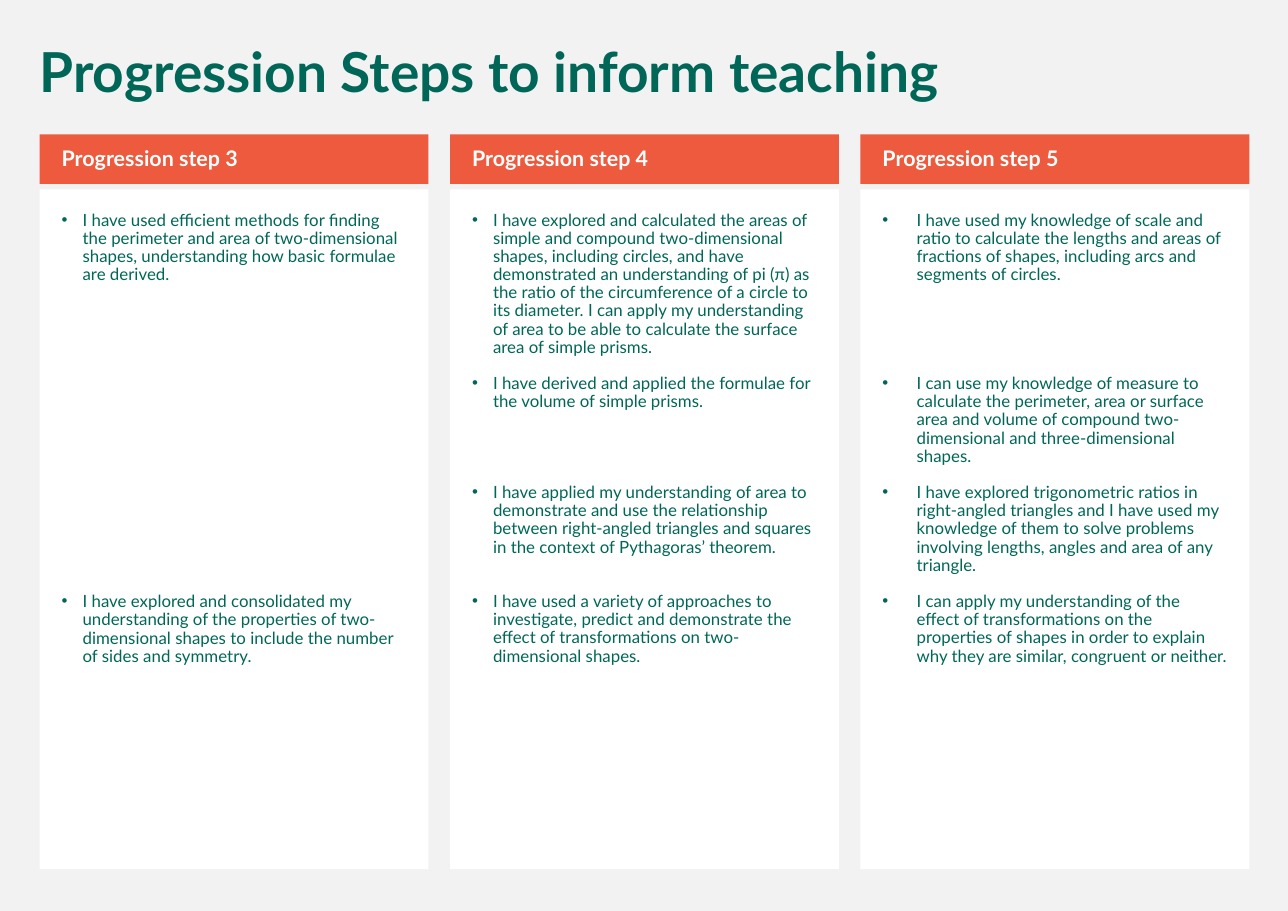
"""Build the slide of progression steps 3 to 5 as three headed columns."""
from lxml.etree import SubElement
from pptx import Presentation
from pptx.dml.color import RGBColor
from pptx.enum.shapes import MSO_SHAPE as SHAPE
from pptx.enum.text import MSO_ANCHOR as ANCHOR, PP_ALIGN as ALIGN
from pptx.oxml.ns import qn
from pptx.util import Inches, Pt

TITLE = "Progression Steps to inform teaching"
# Each statement is preceded by the number of blank lines above it.
STEPS = [
    {"heading": "Progression step 3", "indent": 0.19, "statements": [
        (0, "I have used efficient methods for finding the perimeter and area of two-dimensional "
            "shapes, understanding how basic formulae are derived."),
        (17, "I have explored and consolidated my understanding of the properties of "
             "two-dimensional shapes to include the number of sides and symmetry."),
    ]},
    {"heading": "Progression step 4", "indent": 0.19, "statements": [
        (0, "I have explored and calculated the areas of simple and compound two-dimensional "
            "shapes, including circles, and have demonstrated an understanding of pi (π) as the "
            "ratio of the circumference of a circle to its diameter. I can apply my understanding "
            "of area to be able to calculate the surface area of simple prisms."),
        (1, "I have derived and applied the formulae for the volume of simple prisms."),
        (4, "I have applied my understanding of area to demonstrate and use the relationship "
            "between right-angled triangles and squares in the context of Pythagoras’ theorem."),
        (2, "I have used a variety of approaches to investigate, predict and demonstrate the "
            "effect of transformations on two-dimensional shapes."),
    ]},
    {"heading": "Progression step 5", "indent": 0.31, "statements": [
        (0, "I have used my knowledge of scale and ratio to calculate the lengths and areas of "
            "fractions of shapes, including arcs and segments of circles."),
        (5, "I can use my knowledge of measure to calculate the perimeter, area or surface area "
            "and volume of compound two-dimensional and three‑dimensional shapes."),
        (1, "I have explored trigonometric ratios in right-angled triangles and I have used my "
            "knowledge of them to solve problems involving lengths, angles and area of any "
            "triangle."),
        (1, "I can apply my understanding of the effect of transformations on the properties of "
            "shapes in order to explain why they are similar, congruent or neither."),
    ]},
]
COLORS = {"page": "F2F2F2", "panel": "FFFFFF", "heading": "ED5A3E",
          "heading_text": "FFFFFF", "text": "006758"}
FONT = "Lato"
LINE_SPACING = 0.9
STATEMENT_SIZE = 11
LINE_PITCH = STATEMENT_SIZE * 1.2 * LINE_SPACING
PAGE_WIDTH, PAGE_HEIGHT = 11.69, 8.27
LEFT, RIGHT, COLUMN_WIDTH = 0.36, 11.34, 3.53
HEADING_TOP, HEADING_HEIGHT = 1.22, 0.45
PANEL_TOP, PANEL_HEIGHT = 1.72, 6.17


def color(name):
    return RGBColor.from_string(COLORS[name])


def set_frame(frame, insets, anchor):
    frame.word_wrap = True
    frame.vertical_anchor = anchor
    (frame.margin_left, frame.margin_top,
     frame.margin_right, frame.margin_bottom) = map(Inches, insets)


def write(paragraph, text, size, color_name, bold=False):
    paragraph.text = text
    paragraph.alignment = ALIGN.LEFT
    paragraph.line_spacing = LINE_SPACING
    font = paragraph.font
    font.name, font.size, font.bold = FONT, Pt(size), bold
    font.color.rgb = color(color_name)


def add_block(slide, left, top, height, fill, insets, anchor):
    block = slide.shapes.add_shape(SHAPE.RECTANGLE, Inches(left), Inches(top),
                                   Inches(COLUMN_WIDTH), Inches(height))
    block.shadow.inherit = False
    block.fill.solid()
    block.fill.fore_color.rgb = color(fill)
    block.line.fill.background()
    set_frame(block.text_frame, insets, anchor)
    return block.text_frame


def add_bullet(paragraph, indent):
    properties = paragraph._p.get_or_add_pPr()
    properties.set("marL", str(Inches(indent)))
    properties.set("indent", str(-Inches(indent)))
    bullet_font = SubElement(properties, qn("a:buFont"))
    bullet_font.set("typeface", "Arial")
    bullet = SubElement(properties, qn("a:buChar"))
    bullet.set("char", "•")
    properties.append(properties.find(qn("a:defRPr")))


def add_step(slide, left, step):
    panel = add_block(slide, left, PANEL_TOP, PANEL_HEIGHT, "panel", [0.2] * 4, ANCHOR.TOP)
    for number, (blank_lines, statement) in enumerate(step["statements"]):
        paragraph = panel.add_paragraph() if number else panel.paragraphs[0]
        write(paragraph, statement, STATEMENT_SIZE, "text")
        paragraph.space_before = Pt(blank_lines * LINE_PITCH)
        add_bullet(paragraph, step["indent"])
    heading = add_block(slide, left, HEADING_TOP, HEADING_HEIGHT, "heading",
                        [0.2, 0.05, 0.1, 0.05], ANCHOR.MIDDLE)
    write(heading.paragraphs[0], step["heading"], 14, "heading_text", bold=True)


def main():
    presentation = Presentation()
    presentation.slide_width = Inches(PAGE_WIDTH)
    presentation.slide_height = Inches(PAGE_HEIGHT)
    slide = presentation.slides.add_slide(presentation.slide_layouts[6])
    slide.background.fill.solid()
    slide.background.fill.fore_color.rgb = color("page")

    column_step = (RIGHT - LEFT - COLUMN_WIDTH) / (len(STEPS) - 1)
    for number, step in enumerate(STEPS):
        add_step(slide, LEFT + number * column_step, step)

    title = slide.shapes.add_textbox(Inches(0.26), Inches(0.36), Inches(11.08), Inches(0.65))
    set_frame(title.text_frame, [0.1, 0.05, 0.1, 0.05], ANCHOR.TOP)
    write(title.text_frame.paragraphs[0], TITLE, 36, "text", bold=True)
    presentation.save("out.pptx")


if __name__ == "__main__":
    main()
